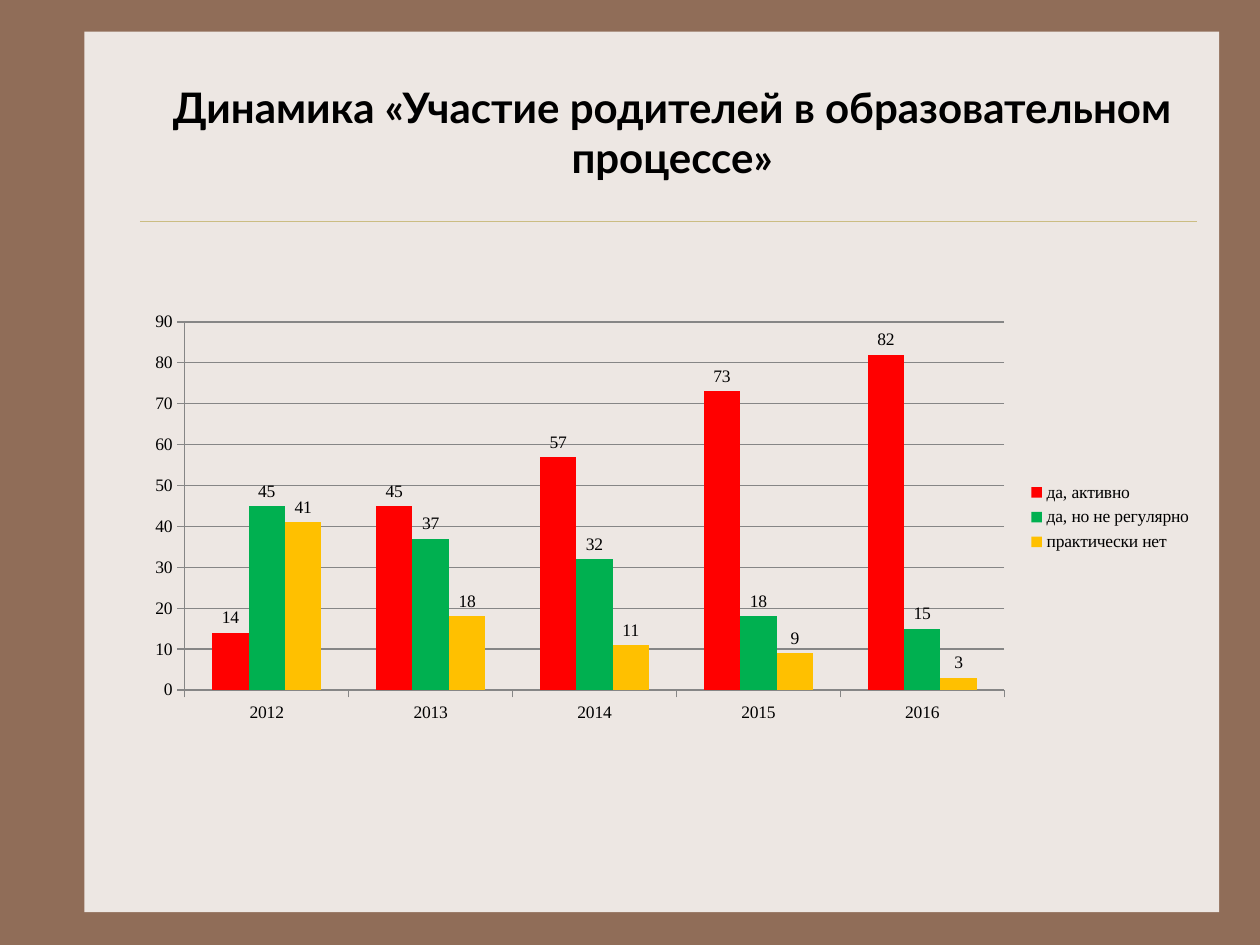
from dataclasses import dataclass

from pptx import Presentation
from pptx.chart.data import CategoryChartData
from pptx.dml.color import RGBColor
from pptx.enum.chart import XL_CHART_TYPE as ChartType
from pptx.enum.chart import XL_LABEL_POSITION as LabelPosition
from pptx.enum.chart import XL_LEGEND_POSITION as LegendPosition
from pptx.enum.chart import XL_TICK_MARK as TickMark
from pptx.enum.shapes import MSO_CONNECTOR as Connector
from pptx.enum.shapes import MSO_SHAPE as Shape
from pptx.enum.text import MSO_ANCHOR as Anchor
from pptx.enum.text import MSO_AUTO_SIZE as AutoSize
from pptx.enum.text import PP_ALIGN as Align
from pptx.oxml.ns import qn
from pptx.util import Cm, Pt
from lxml.etree import SubElement


@dataclass(frozen=True)
class Theme:
    backdrop: str = "906D58"
    panel: str = "EDE7E3"
    rule: str = "CBBD83"
    ink: str = "000000"
    axis: str = "868686"
    series: tuple = ("FF0000", "00B050", "FFC000")
    title_font: str = "Lato"
    chart_font: str = "Times New Roman"
    title_size: int = 24
    chart_size: int = 10


def rgb(code):
    return RGBColor.from_string(code)


class SlideBuilder:
    """Holds the theme and the current slide and adds elements to it."""

    def __init__(self, page, theme):
        self.page = page
        self.theme = theme
        page.background.fill.solid()
        page.background.fill.fore_color.rgb = rgb(theme.backdrop)

    def style_font(self, font, name, size, bold=False):
        font.name = name
        font.size = Pt(size)
        font.bold = bold
        font.color.rgb = rgb(self.theme.ink)

    def panel(self, left, top, width, height):
        panel = self.page.shapes.add_shape(
            Shape.RECTANGLE, Cm(left), Cm(top), Cm(width), Cm(height))
        panel.shadow.inherit = False
        panel.fill.solid()
        panel.fill.fore_color.rgb = rgb(self.theme.panel)
        panel.line.fill.background()

    def rule(self, left, right, top):
        rule = self.page.shapes.add_connector(
            Connector.STRAIGHT, Cm(left), Cm(top), Cm(right), Cm(top))
        rule.line.color.rgb = rgb(self.theme.rule)
        rule.line.width = Pt(0.25)
        SubElement(rule.element.spPr, qn("a:effectLst"))

    def title(self, text, left, top, width, height):
        title = self.page.shapes.title
        title.left, title.top = Cm(left), Cm(top)
        title.width, title.height = Cm(width), Cm(height)
        frame = title.text_frame
        frame.text = text
        frame.word_wrap = True
        frame.auto_size = AutoSize.NONE
        frame.vertical_anchor = Anchor.MIDDLE
        para = frame.paragraphs[0]
        para.alignment = Align.CENTER
        for span in para.runs:
            self.style_font(span.font, self.theme.title_font, self.theme.title_size, True)
        title.element.getparent().append(title.element)

    def column_chart(self, categories, series, left, top, width, height):
        data = CategoryChartData(number_format="General")
        data.categories = categories
        for name, values in series.items():
            data.add_series(name, values)
        chart = self.page.shapes.add_chart(
            ChartType.COLUMN_CLUSTERED, Cm(left), Cm(top), Cm(width), Cm(height), data).chart
        self.style_font(chart.font, self.theme.chart_font, self.theme.chart_size)
        chart.has_title = False
        chart.has_legend = True
        chart.legend.position = LegendPosition.RIGHT
        chart.legend.include_in_layout = False
        self.format_axes(chart)
        plot = chart.plots[0]
        plot.gap_width = 150
        plot.overlap = 0
        plot.vary_by_categories = False
        for bars, color in zip(plot.series, self.theme.series):
            bars.invert_if_negative = False
            bars.format.fill.solid()
            bars.format.fill.fore_color.rgb = rgb(color)
            bars.data_labels.show_value = True
            bars.data_labels.position = LabelPosition.OUTSIDE_END

    def format_axes(self, chart):
        value_axis = chart.value_axis
        value_axis.minimum_scale = 0
        value_axis.maximum_scale = 90
        value_axis.major_unit = 10
        value_axis.has_major_gridlines = True
        for axis in (chart.category_axis, value_axis):
            axis.major_tick_mark = TickMark.OUTSIDE
            axis.minor_tick_mark = TickMark.NONE
        for item in (chart.category_axis, value_axis, value_axis.major_gridlines):
            item.format.line.color.rgb = rgb(self.theme.axis)
            item.format.line.width = Pt(0.75)


def main():
    deck = Presentation()
    deck.slide_width, deck.slide_height = Cm(25.4), Cm(19.05)
    builder = SlideBuilder(deck.slides.add_slide(deck.slide_layouts[5]), Theme())
    builder.panel(1.7, 0.64, 22.88, 17.75)
    builder.rule(2.82, 24.13, 4.45)
    builder.title("Динамика «Участие родителей в образовательном процессе»",
                  2.97, 1.07, 21.16, 3.18)
    builder.column_chart(
        ("2012", "2013", "2014", "2015", "2016"),
        {
            "да, активно": (14, 45, 57, 73, 82),
            "да, но не регулярно": (45, 37, 32, 18, 15),
            "практически нет": (41, 18, 11, 9, 3),
        },
        2.7, 6.12, 21.59, 8.61)
    deck.save("out.pptx")


if __name__ == "__main__":
    main()
